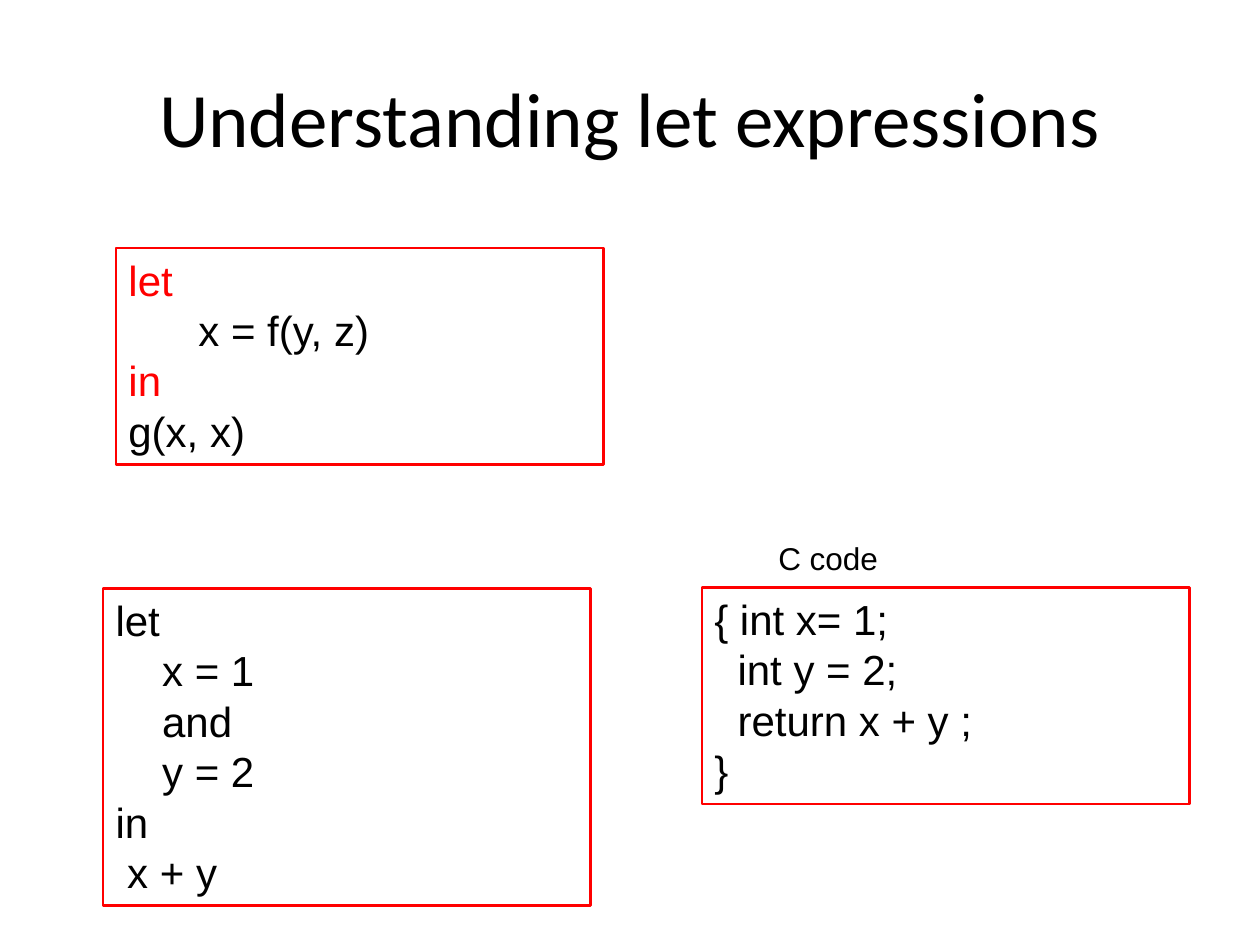
import pptx
import pptx.dml.color
import pptx.enum.shapes
import pptx.enum.text
import pptx.util

Cm = pptx.util.Cm
RED, BLACK = "FF0000", "000000"
WIDE, LINE, PAD = 9.83, 1.01, 0.33
SPACE = 0.235


def paint(code):
    """Turn a hex string into a colour."""
    return pptx.dml.color.RGBColor.from_string(code)


def write(para, text, size, hue=BLACK, face="Arial"):
    """Add one formatted run to a paragraph."""
    run = para.add_run()
    run.text = text
    run.font.size = pptx.util.Pt(size)
    run.font.name = face
    run.font.color.rgb = paint(hue)


def head(slide, text):
    """Place and fill the title."""
    title = slide.shapes.title
    title.left, title.top = Cm(1.27), Cm(0.76)
    title.width, title.height = Cm(22.86), Cm(3.18)
    frame = title.text_frame
    frame.vertical_anchor = pptx.enum.text.MSO_ANCHOR.MIDDLE
    para = frame.paragraphs[0]
    para.alignment = pptx.enum.text.PP_ALIGN.CENTER
    write(para, text, 44, face="Calibri")


def fit(frame):
    """Wrap the text and let its shape grow with it."""
    frame.word_wrap = True
    frame.auto_size = pptx.enum.text.MSO_AUTO_SIZE.SHAPE_TO_FIT_TEXT


def code(shapes, left, top, rows):
    """Draw a red frame of code from rows of indent, text and colour."""
    box = shapes.add_shape(
        pptx.enum.shapes.MSO_SHAPE.RECTANGLE,
        Cm(left), Cm(top), Cm(WIDE), Cm(len(rows) * LINE + PAD))
    box.shadow.inherit = False
    box.fill.background()
    box.line.color.rgb = paint(RED)
    box.line.width = pptx.util.Pt(1.5)
    frame = box.text_frame
    fit(frame)
    frame.vertical_anchor = pptx.enum.text.MSO_ANCHOR.TOP
    for at, (depth, text, hue) in enumerate(rows):
        para = frame.add_paragraph() if at else frame.paragraphs[0]
        para.alignment = pptx.enum.text.PP_ALIGN.LEFT
        if depth:
            props = para._p.get_or_add_pPr()
            props.set("marL", str(int(Cm(depth * SPACE))))
            props.set("indent", "0")
        write(para, text, 24, hue)


def label(shapes, left, top, text):
    """Add a small caption."""
    box = shapes.add_textbox(Cm(left), Cm(top), Cm(5.54), Cm(1.03))
    fit(box.text_frame)
    write(box.text_frame.paragraphs[0], text, 18)


def main():
    """Build and save the slide."""
    deck = pptx.Presentation()
    deck.slide_width, deck.slide_height = Cm(25.4), Cm(19.05)
    slide = deck.slides.add_slide(deck.slide_layouts[5])
    head(slide, "Understanding let expressions")
    code(slide.shapes, 2.34, 5, [
        (0, "let", RED), (6, "x = f(y, z)", BLACK),
        (0, "in", RED), (0, "g(x, x)", BLACK)])
    code(slide.shapes, 2.08, 11.86, [
        (0, "let", BLACK), (4, "x = 1", BLACK), (4, "and", BLACK),
        (4, "y = 2", BLACK), (0, "in", BLACK), (1, "x + y", BLACK)])
    group = slide.shapes.add_group_shape()
    code(group.shapes, 14.15, 11.84, [
        (0, "{ int x= 1;", BLACK), (2, "int y = 2;", BLACK),
        (2, "return x + y ;", BLACK), (0, "}", BLACK)])
    label(group.shapes, 15.44, 10.74, "C code")
    deck.save("out.pptx")


if __name__ == "__main__":
    main()
